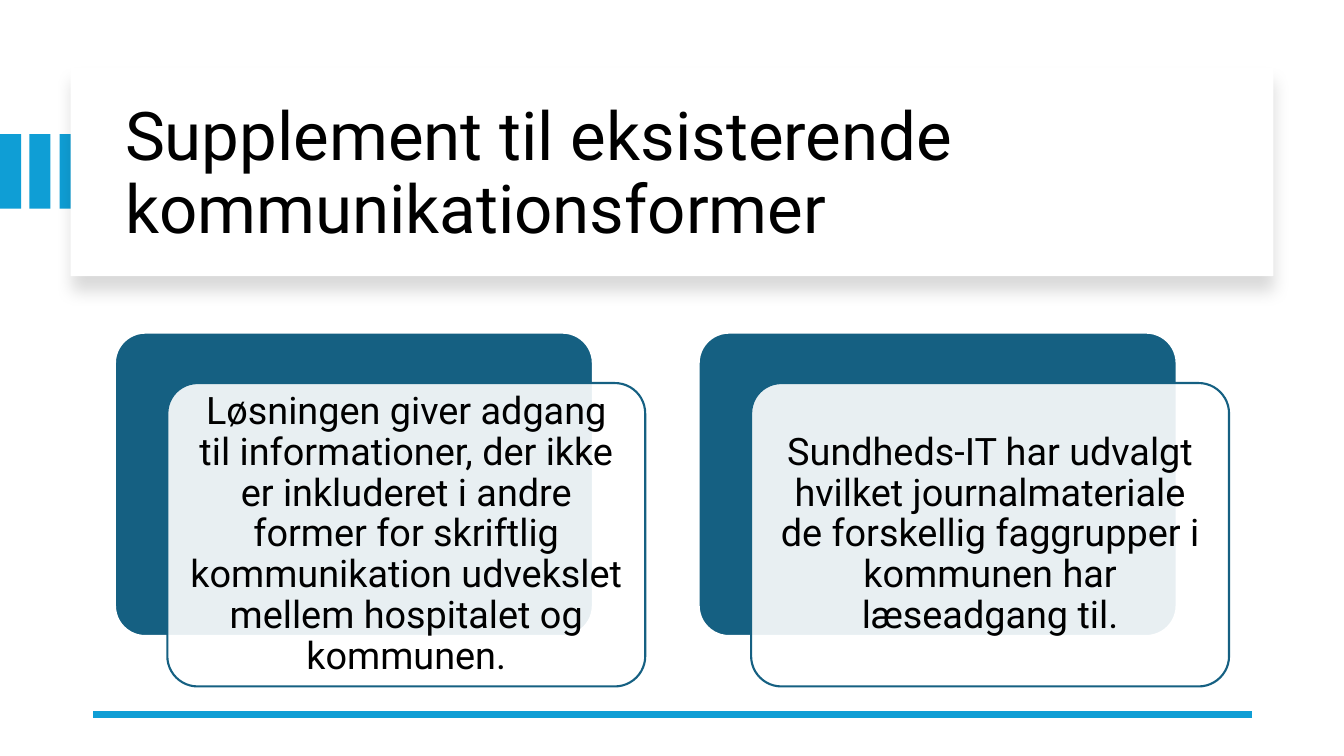
"""Build a Danish title slide with two layered text cards."""
from dataclasses import dataclass

from lxml import etree
from pptx import Presentation
from pptx import util as u
from pptx.dml.color import RGBColor
from pptx.enum import shapes, text
from pptx.oxml import ns

EMU_PER_PX = 9144


@dataclass(frozen=True)
class Theme:
    """Colours, font and type sizes."""
    accent: str = "0F9ED5"
    card: str = "156082"
    paper: str = "FFFFFF"
    ink: str = "000000"
    font: str = "Roboto"
    title_size: int = 48
    body_size: int = 27


@dataclass(frozen=True)
class Box:
    """A rectangle in px, one hundred to the inch."""
    left: int
    top: int
    width: int
    height: int

    def emu(self) -> list[u.Emu]:
        """Return left, top, width and height in EMU."""
        return [px(n) for n in (self.left, self.top, self.width, self.height)]


@dataclass(frozen=True)
class Card:
    """A text card and its left edge."""
    left: int
    wording: str


THEME = Theme()
CARD_TOP, CARD_WIDTH, CARD_HEIGHT = 330, 474, 301
FACE_SHIFT_X, FACE_SHIFT_Y, FACE_INSET, TEXT_MARGIN = 52, 50, 9, 11
STRIPES = [Box(i * 59 // 2, 133, 21, 74) for i in range(3)]
PANEL = Box(70, 67, 1193, 207)
TITLE = Box(114, 89, 1113, 170)
CARDS = [
    Card(114, "Løsningen giver adgang til informationer, der ikke er inkluderet i andre "
              "former for skriftlig kommunikation udvekslet mellem hospitalet og kommunen."),
    Card(693, "Sundheds-IT har udvalgt hvilket journalmateriale de forskellig faggrupper "
              "i kommunen har læseadgang til."),
]


def px(count: int) -> u.Emu:
    """Convert px to EMU."""
    return u.Emu(count * EMU_PER_PX)


def colour(value: str) -> RGBColor:
    """Convert a hex string to a colour."""
    return RGBColor.from_string(value)


def add_child(parent, tag: str, **attributes: str):
    """Append an XML child and return it."""
    return etree.SubElement(parent, ns.qn(tag), attributes)


def add_block(page, box: Box, fill: str, line: str | None = None, rounded: bool = False):
    """Draw a filled rectangle, optionally outlined and rounded."""
    kind = shapes.MSO_SHAPE.ROUNDED_RECTANGLE if rounded else shapes.MSO_SHAPE.RECTANGLE
    block = page.shapes.add_shape(kind, *box.emu())
    block.shadow.inherit = False
    block.fill.solid()
    block.fill.fore_color.rgb = colour(fill)
    if rounded:
        block.adjustments[0] = 0.1
    if line:
        block.line.color.rgb = colour(line)
        block.line.width = u.Pt(1.5)
    else:
        block.line.fill.background()
    return block


def write(frame, wording: str, size: int, align: text.PP_ALIGN) -> None:
    """Write one vertically centred paragraph."""
    frame.word_wrap = True
    frame.auto_size = text.MSO_AUTO_SIZE.NONE
    frame.vertical_anchor = text.MSO_ANCHOR.MIDDLE
    para = frame.paragraphs[0]
    para.alignment = align
    para.line_spacing = 0.9
    span = para.add_run()
    span.text = wording
    span.font.name = THEME.font
    span.font.size = u.Pt(size)
    span.font.color.rgb = colour(THEME.ink)


def add_heading(page) -> None:
    """Draw the shadowed panel and place the title on it."""
    panel = add_block(page, PANEL, THEME.paper)
    effects = panel.element.spPr.find(ns.qn("a:effectLst"))
    shadow = add_child(effects, "a:outerShdw", blurRad=str(u.Pt(11)), dist=str(u.Pt(10)),
                       dir="5400000", algn="t", rotWithShape="0")
    tint = add_child(shadow, "a:srgbClr", val=THEME.ink)
    add_child(tint, "a:alpha", val="15000")
    title = page.shapes.title
    title.left, title.top, title.width, title.height = TITLE.emu()
    write(title.text_frame, "Supplement til eksisterende kommunikationsformer",
          THEME.title_size, text.PP_ALIGN.LEFT)
    panel.element.addnext(title.element)


def add_rule(page) -> None:
    """Draw the accent line at the foot."""
    rule = page.shapes.add_connector(shapes.MSO_CONNECTOR.STRAIGHT,
                                     px(1242), px(709), px(92), px(709))
    rule.line.color.rgb = colour(THEME.accent)
    rule.line.width = u.Pt(4.5)
    add_child(rule.element.spPr, "a:effectLst")


def add_card(page, card: Card) -> None:
    """Draw a dark back, a translucent face and its text."""
    back = Box(card.left, CARD_TOP, CARD_WIDTH, CARD_HEIGHT)
    face = Box(back.left + FACE_SHIFT_X, back.top + FACE_SHIFT_Y, back.width, back.height)
    inner = Box(face.left + FACE_INSET, face.top + FACE_INSET,
                face.width - 2 * FACE_INSET, face.height - 2 * FACE_INSET)
    add_block(page, back, THEME.card, THEME.paper, rounded=True)
    front = add_block(page, face, THEME.paper, THEME.card, rounded=True)
    tint = front.element.spPr.find(ns.qn("a:solidFill"))[0]
    add_child(tint, "a:alpha", val="90000")
    frame = page.shapes.add_textbox(*inner.emu()).text_frame
    frame.margin_left = frame.margin_right = px(TEXT_MARGIN)
    frame.margin_top = frame.margin_bottom = px(TEXT_MARGIN)
    write(frame, card.wording, THEME.body_size, text.PP_ALIGN.CENTER)


def main() -> None:
    """Build and save the deck."""
    deck = Presentation()
    deck.slide_width, deck.slide_height = px(1333), px(750)
    page = deck.slides.add_slide(deck.slide_layouts.get_by_name("Title Only"))
    for stripe in STRIPES:
        add_block(page, stripe, THEME.accent)
    add_heading(page)
    add_rule(page)
    for card in CARDS:
        add_card(page, card)
    deck.save("out.pptx")


if __name__ == "__main__":
    main()
